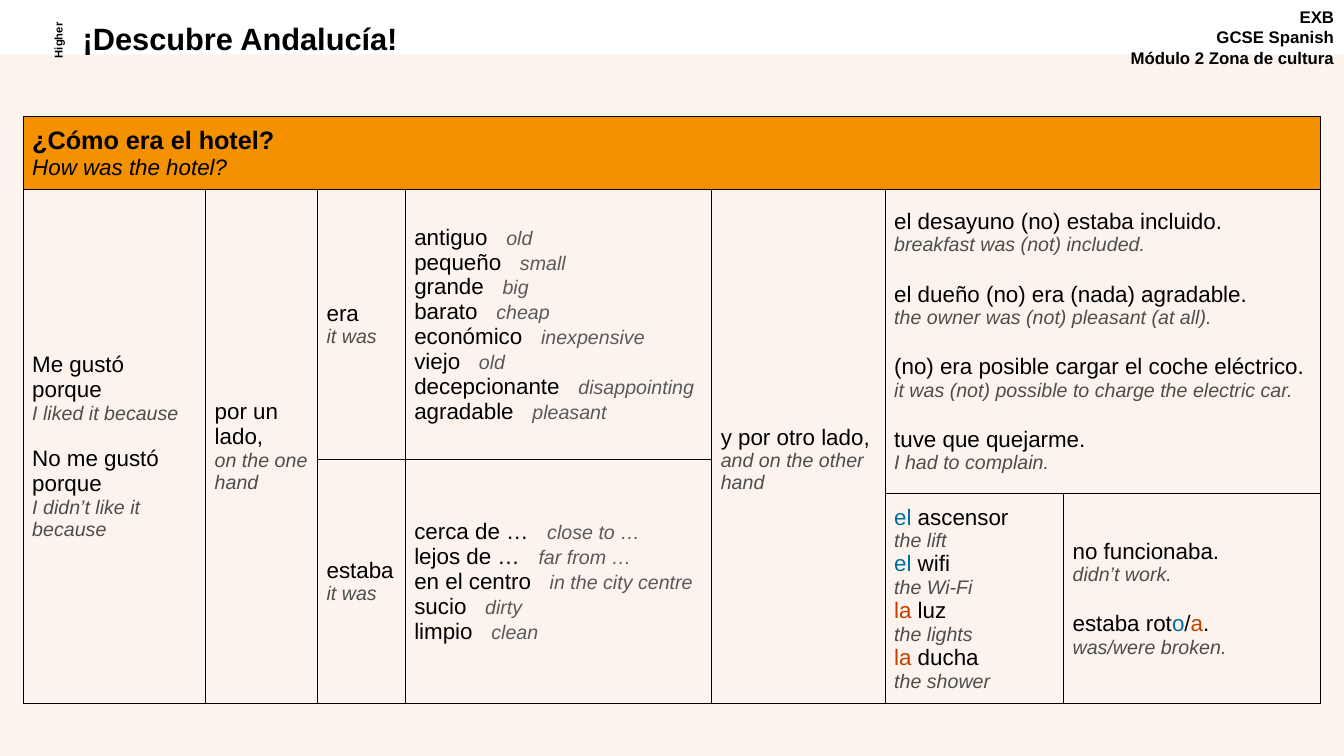
from lxml import etree
from pptx import Presentation
from pptx.dml.color import RGBColor
from pptx.enum.shapes import MSO_SHAPE
from pptx.enum.text import MSO_ANCHOR, PP_ALIGN
from pptx.oxml.ns import qn
from pptx.util import Inches, Pt

RECTANGLE = MSO_SHAPE.RECTANGLE
MIDDLE = MSO_ANCHOR.MIDDLE
LEFT, CENTER, RIGHT = PP_ALIGN.LEFT, PP_ALIGN.CENTER, PP_ALIGN.RIGHT
COLORS = {
    "black": "000000", "cream": "FDF3ED", "orange": "F39100",
    "translation": "4D4D4C", "gloss": "595959",
    "masculine": "006F9E", "feminine": "C04000",
}


def write(para, text, size=16, color="black", bold=False, italic=False, spacing=None):
    """Add a span to a paragraph; spacing is extra letter spacing in points."""
    span = para.add_run()
    span.text = text
    span.font.name = "Arial"
    span.font.size = Pt(size)
    span.font.bold = bold
    span.font.italic = italic
    span.font.color.rgb = RGBColor.from_string(COLORS[color])
    if spacing:
        span.font._element.set("spc", str(round(spacing * 100)))


def outline(cell):
    """Draw thin black borders on all four sides of a cell."""
    properties = cell._tc.get_or_add_tcPr()
    for side in ("a:lnL", "a:lnR", "a:lnT", "a:lnB"):
        line = etree.SubElement(properties, qn(side), w=str(Pt(0.75)))
        fill = etree.SubElement(line, qn("a:solidFill"))
        etree.SubElement(fill, qn("a:srgbClr"), val=COLORS["black"])


deck = Presentation()
deck.slide_width, deck.slide_height = Inches(13.33), Inches(7.5)
page = deck.slides.add_slide(deck.slide_layouts[5])

# Title on top of the cream backdrop
title = page.shapes.title
backdrop = page.shapes.add_shape(RECTANGLE, 0, Inches(0.54), Inches(13.33), Inches(6.96))
backdrop.shadow.inherit = False
backdrop.fill.solid()
backdrop.fill.fore_color.rgb = RGBColor.from_string(COLORS["cream"])
backdrop.line.fill.background()
title.element.addprevious(backdrop.element)

title.left, title.top = Inches(0.72), Inches(0.19)
title.width, title.height = Inches(6.88), Inches(0.43)
title.text_frame.vertical_anchor = MIDDLE
title_para = title.text_frame.paragraphs[0]
title_para.alignment = LEFT
title_para.line_spacing = 0.9
write(title_para, "¡Descubre Andalucía!", size=22, bold=True)

# Course details and tier label
labels = [
    ((10.95, 0.02, 2.38, 0.77), 0, RIGHT, 12,
     ["EXB", "GCSE Spanish", "Módulo 2 Zona de cultura"]),
    ((0.18, 0.29, 0.78, 0.22), 270, CENTER, 8, ["Higher"]),
]
for place, rotation, alignment, size, lines in labels:
    box = page.shapes.add_textbox(*map(Inches, place))
    box.rotation = rotation
    box.text_frame.word_wrap = True
    for index, text in enumerate(lines):
        para = box.text_frame.add_paragraph() if index else box.text_frame.paragraphs[0]
        para.alignment = alignment
        write(para, text, size=size, bold=True)

# Sentence builder grid
COLUMN_WIDTHS = [1.81, 1.11, 0.87, 3.04, 1.72, 1.77, 2.55]
ROW_HEIGHTS = [0.72, 2.68, 0.34, 1.94]
grid = page.shapes.add_table(
    len(ROW_HEIGHTS), len(COLUMN_WIDTHS), Inches(0.23), Inches(1.16),
    Inches(sum(COLUMN_WIDTHS)), Inches(sum(ROW_HEIGHTS))).table
grid.first_row = grid.horz_banding = False
for column, width in zip(grid.columns, COLUMN_WIDTHS):
    column.width = Inches(width)
for row, height in zip(grid.rows, ROW_HEIGHTS):
    row.height = Inches(height)
for cell in grid.iter_cells():
    outline(cell)
    cell.fill.background()
    cell.vertical_anchor = MIDDLE
    cell.margin_left = cell.margin_right = Inches(0.09)
    cell.margin_top = cell.margin_bottom = Inches(0.04)
for first, last in [((0, 0), (0, 6)), ((1, 0), (3, 0)), ((1, 1), (3, 1)), ((1, 4), (3, 4)),
                    ((1, 5), (2, 6)), ((2, 2), (3, 2)), ((2, 3), (3, 3))]:
    grid.cell(*first).merge(grid.cell(*last))

heading = grid.cell(0, 0)
heading.fill.solid()
heading.fill.fore_color.rgb = RGBColor.from_string(COLORS["orange"])
write(heading.text_frame.paragraphs[0], "¿Cómo era el hotel?", size=18, bold=True)
write(heading.text_frame.add_paragraph(), "How was the hotel?", italic=True)

# Phrases with the translation underneath: (row, column), gap between pairs, pairs
phrases = [
    ((1, 0), 16, [("Me gustó porque", "I liked it because"),
                  ("No me gustó porque", "I didn’t like it because")]),
    ((1, 1), 0, [("por un lado,", "on the one hand")]),
    ((1, 2), 0, [("era", "it was")]),
    ((2, 2), 0, [("estaba", "it was")]),
    ((1, 4), 0, [("y por otro lado,", "and on the other hand")]),
    ((1, 5), 18.4, [
        ("el desayuno (no) estaba incluido.", "breakfast was (not) included."),
        ("el dueño (no) era (nada) agradable.", "the owner was (not) pleasant (at all)."),
        ("(no) era posible cargar el coche eléctrico.",
         "it was (not) possible to charge the electric car."),
        ("tuve que quejarme.", "I had to complain.")]),
    ((3, 5), 0, [
        ([("el", "masculine"), (" ascensor", "black")], "the lift"),
        ([("el", "masculine"), (" wifi", "black")], "the Wi-Fi"),
        ([("la", "feminine"), (" luz", "black")], "the lights"),
        ([("la", "feminine"), (" ducha", "black")], "the shower")]),
    ((3, 6), 18.4, [
        ("no funcionaba.", "didn’t work."),
        ([("estaba rot", "black"), ("o", "masculine"), ("/", "black"),
          ("a", "feminine"), (".", "black")], "was/were broken.")]),
]
for position, gap, pairs in phrases:
    frame = grid.cell(*position).text_frame
    for index, (spanish, english) in enumerate(pairs):
        para = frame.add_paragraph() if index else frame.paragraphs[0]
        if index and gap:
            para.space_before = Pt(gap)
        for text, color in [(spanish, "black")] if isinstance(spanish, str) else spanish:
            write(para, text, color=color)
        write(frame.add_paragraph(), english, size=14, color="translation", italic=True)
grid.cell(1, 4).margin_top = Inches(0.3)

# Adjectives and places with the translation alongside
glossaries = [
    ((1, 3), [("antiguo", "old"), ("pequeño", "small"), ("grande", "big"),
              ("barato", "cheap"), ("económico", "inexpensive"), ("viejo", "old"),
              ("decepcionante", "disappointing"), ("agradable", "pleasant")]),
    ((2, 3), [("cerca de …", "close to …"), ("lejos de …", "far from …"),
              ("en el centro", "in the city centre"), ("sucio", "dirty"),
              ("limpio", "clean")]),
]
for position, entries in glossaries:
    frame = grid.cell(*position).text_frame
    for index, (spanish, english) in enumerate(entries):
        para = frame.add_paragraph() if index else frame.paragraphs[0]
        write(para, spanish)
        write(para, " ", spacing=8.9)
        write(para, english, size=14, color="gloss", italic=True)

deck.save("out.pptx")
